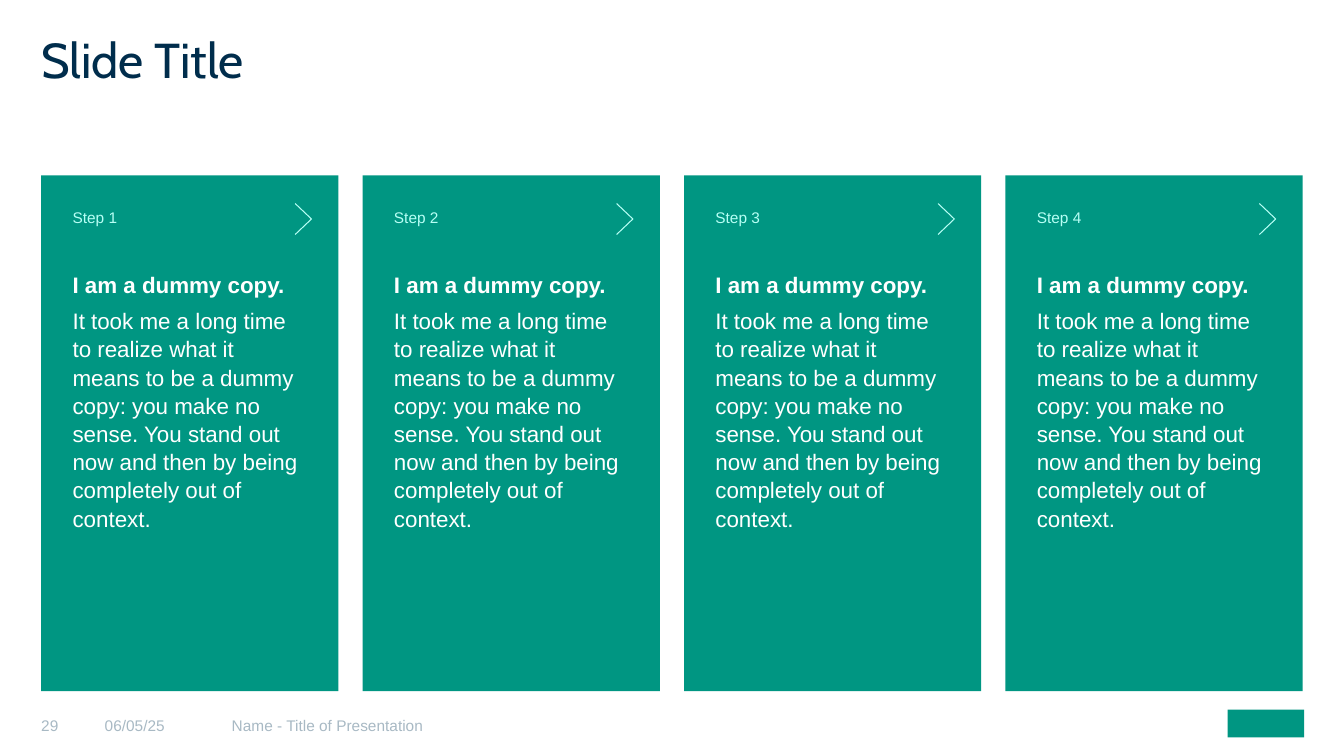
"""Build a slide with four step cards."""
from pptx import Presentation
from pptx.dml.color import RGBColor
from pptx.enum.shapes import MSO_SHAPE
from pptx.enum.text import MSO_ANCHOR, MSO_AUTO_SIZE, PP_ALIGN
from pptx.util import Cm, Pt

GREEN = RGBColor(0x00, 0x96, 0x82)
MINT = RGBColor(0xB7, 0xFF, 0xF5)
NAVY = RGBColor(0x00, 0x2D, 0x4C)
GREY = RGBColor(0xA8, 0xB9, 0xC4)
WHITE = RGBColor(0xFF, 0xFF, 0xFF)

MARGIN = 1.04
CARD_PITCH = 8.1
CARD_TOP = 4.42
HEADING = "I am a dummy copy."
BODY = (
    "It took me a long time to realize what it means to be a dummy copy: "
    "you make no sense. You stand out now and then by being completely out of context."
)
FOOTERS = [
    ("29", MARGIN, 1.6),
    ("06/05/25", 2.64, 3.2),
    ("Name - Title of Presentation", 5.84, 16.2),
]


def write(para, text, size=16, color=WHITE, font="Arial", bold=False,
          before=0, after=0, spacing=1.0):
    para.alignment = PP_ALIGN.LEFT
    para.space_before = Pt(before)
    para.space_after = Pt(after)
    para.line_spacing = spacing
    span = para.add_run()
    span.text = text
    span.font.size = Pt(size)
    span.font.name = font
    span.font.bold = bold
    span.font.color.rgb = color


class StepSlide:
    def __init__(self, deck):
        self.page = deck.slides.add_slide(deck.slide_layouts[5])
        self.shapes = self.page.shapes

    def frame(self, box, anchor, insets):
        frame = box.text_frame
        frame.word_wrap = True
        frame.auto_size = MSO_AUTO_SIZE.NONE
        frame.vertical_anchor = anchor
        (frame.margin_left, frame.margin_top,
         frame.margin_right, frame.margin_bottom) = [Cm(inset) for inset in insets]
        return frame

    def title(self, text):
        box = self.shapes.title
        box.left, box.top, box.width, box.height = Cm(MARGIN), Cm(1.02), Cm(31.8), Cm(2.79)
        frame = self.frame(box, MSO_ANCHOR.TOP, (0, 0, 0, 0))
        write(frame.paragraphs[0], text, size=35, color=NAVY, font="Cabin", spacing=0.8)

    def footer(self, text, left, width):
        box = self.shapes.add_textbox(Cm(left), Cm(17.42), Cm(width), Cm(1.63))
        frame = self.frame(box, MSO_ANCHOR.MIDDLE, (0, 0.1, 0, 0))
        write(frame.paragraphs[0], text, size=11, color=GREY)

    def rectangle(self, left, top, width, height):
        box = self.shapes.add_shape(
            MSO_SHAPE.RECTANGLE, Cm(left), Cm(top), Cm(width), Cm(height))
        box.shadow.inherit = False
        box.fill.solid()
        box.fill.fore_color.rgb = GREEN
        box.line.fill.background()
        return box

    def card(self, left, label):
        box = self.rectangle(left, CARD_TOP, 7.49, 13)
        frame = self.frame(box, MSO_ANCHOR.TOP, (0.79, 0.79, 0.79, 0.79))
        write(frame.paragraphs[0], label, size=11, color=MINT,
              before=3, after=3, spacing=1.05)
        write(frame.add_paragraph(), HEADING, bold=True,
              before=28, after=3, spacing=1.05)
        write(frame.add_paragraph(), BODY, before=3, after=3, spacing=1.05)

    def chevron(self, left, top, width=0.41, height=0.78):
        builder = self.shapes.build_freeform(Cm(left), Cm(top))
        builder.add_line_segments(
            [(Cm(left + width), Cm(top + height / 2)), (Cm(left), Cm(top + height))],
            close=False)
        arrow = builder.convert_to_shape()
        arrow.shadow.inherit = False
        arrow.fill.background()
        arrow.line.color.rgb = MINT
        arrow.line.width = Pt(0.75)


def main():
    deck = Presentation()
    deck.slide_width, deck.slide_height = Cm(33.87), Cm(19.05)
    slide = StepSlide(deck)
    slide.title("Slide Title")
    for index in range(4):
        left = MARGIN + index * CARD_PITCH
        slide.card(left, f"Step {index + 1}")
        slide.chevron(left + 6.4, CARD_TOP + 0.71)
    for text, left, width in FOOTERS:
        slide.footer(text, left, width)
    slide.rectangle(30.94, 17.88, 1.93, 0.7)
    deck.save("out.pptx")


if __name__ == "__main__":
    main()
